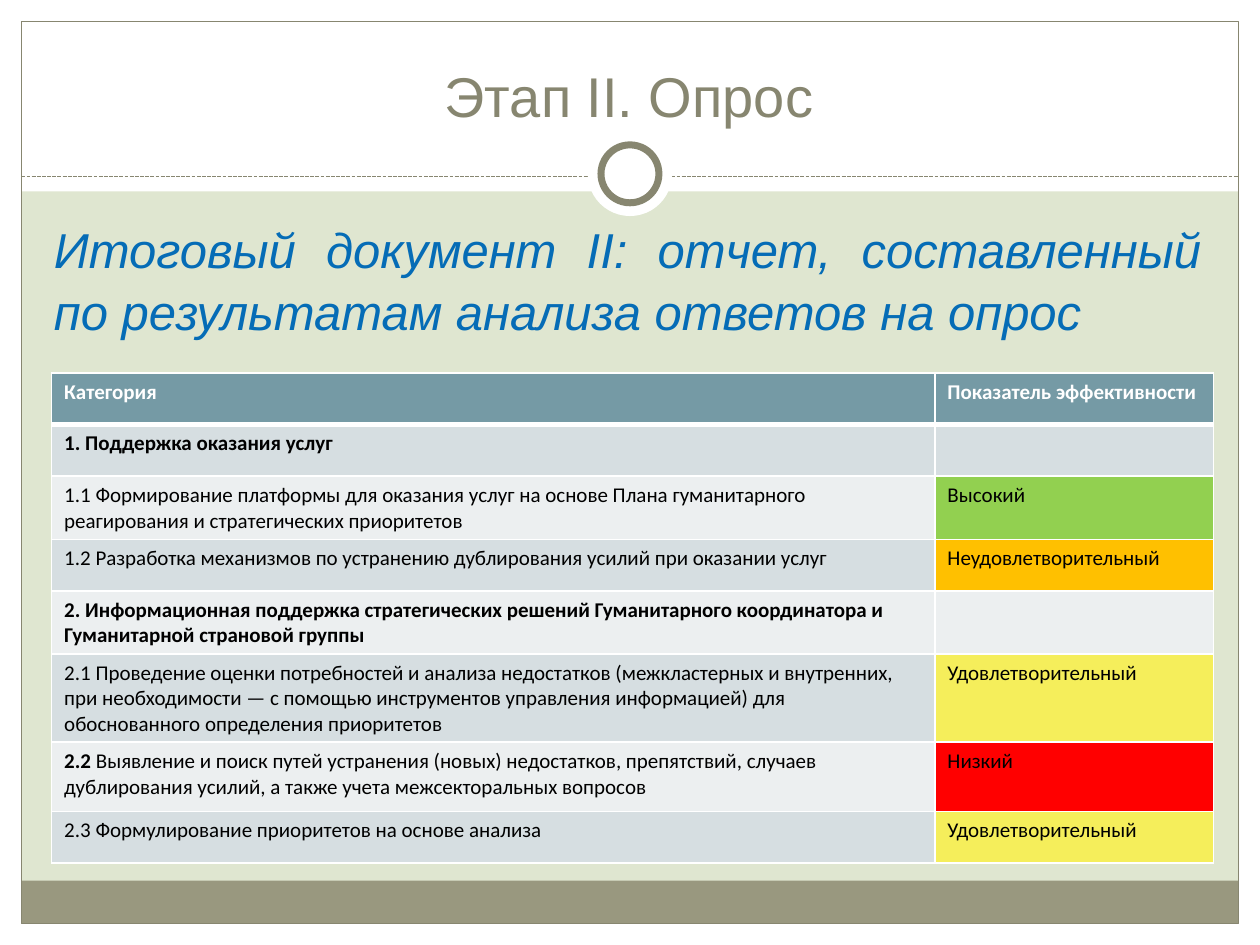
from dataclasses import dataclass

from lxml.etree import SubElement
from pptx import Presentation
from pptx.dml.color import RGBColor
from pptx.enum.dml import MSO_LINE
from pptx.enum.shapes import MSO_CONNECTOR, MSO_SHAPE
from pptx.enum.text import MSO_ANCHOR, PP_ALIGN
from pptx.oxml.ns import qn
from pptx.util import Inches, Pt


@dataclass(frozen=True)
class Theme:
    """Colours, fonts and type sizes of the deck."""
    paper: str = "DFE6D0"
    white: str = "FFFFFF"
    black: str = "000000"
    olive: str = "878670"
    footer: str = "99987F"
    accent: str = "056CB6"
    header: str = "759AA5"
    bands: tuple = ("D6DEE1", "ECEFF0")
    display_font: str = "Arial"
    table_font: str = "Calibri"
    title_size: int = 32
    lead_size: int = 28
    table_size: int = 12


RATINGS = {
    "Высокий": "92D050",
    "Неудовлетворительный": "FFC000",
    "Удовлетворительный": "F5EE5B",
    "Низкий": "FF0000",
}

HEADINGS = ("Категория", "Показатель эффективности")

CATEGORIES = [
    ("1. Поддержка оказания услуг", "", ""),
    ("", "1.1 Формирование платформы для оказания услуг на основе Плана гуманитарного "
         "реагирования и стратегических приоритетов", "Высокий"),
    ("", "1.2 Разработка механизмов по устранению дублирования усилий при оказании услуг",
     "Неудовлетворительный"),
    ("2. Информационная поддержка стратегических решений Гуманитарного координатора и "
     "Гуманитарной страновой группы", "", ""),
    ("", "2.1 Проведение оценки потребностей и анализа недостатков (межкластерных и внутренних, "
         "при необходимости — с помощью инструментов управления информацией) для "
         "обоснованного определения приоритетов", "Удовлетворительный"),
    ("2.2 ", "Выявление и поиск путей устранения (новых) недостатков, препятствий, случаев "
             "дублирования усилий, а также учета межсекторальных вопросов", "Низкий"),
    ("", "2.3 Формулирование приоритетов на основе анализа", "Удовлетворительный"),
]


class SlideBuilder:
    """Draws themed elements on a grid of 100 columns by 75 rows."""

    def __init__(self, deck, theme):
        """Add a blank slide with the theme background."""
        self.theme = theme
        self.column = deck.slide_width / 100
        self.row = deck.slide_height / 75
        self.slide = deck.slides.add_slide(deck.slide_layouts[6])
        backdrop = self.slide.background.fill
        backdrop.solid()
        backdrop.fore_color.rgb = RGBColor.from_string(theme.paper)

    def place(self, left, top, width, height):
        """Turn grid units into slide lengths."""
        return (round(left * self.column), round(top * self.row),
                round(width * self.column), round(height * self.row))

    def apply(self, target, values):
        """Set each attribute named in a dict of format values."""
        for name, value in values.items():
            setattr(target, name, value)

    def panel(self, area, fill=None, line=None, weight=0.75, kind=MSO_SHAPE.RECTANGLE):
        """Draw a preset shape with an optional fill and outline."""
        panel = self.slide.shapes.add_shape(kind, *self.place(*area))
        panel.shadow.inherit = False
        for paint, colour in ((panel.fill, fill), (panel.line.fill, line)):
            if colour:
                paint.solid()
                paint.fore_color.rgb = RGBColor.from_string(colour)
            else:
                paint.background()
        if line:
            panel.line.width = Pt(weight)

    def divider(self, left, right, level):
        """Draw a dashed horizontal rule."""
        x, y, width, _ = self.place(left, level, right - left, 0)
        rule = self.slide.shapes.add_connector(MSO_CONNECTOR.STRAIGHT, x, y, x + width, y)
        rule.line.color.rgb = RGBColor.from_string(self.theme.olive)
        self.apply(rule.line, {"width": Pt(0.75), "dash_style": MSO_LINE.SQUARE_DOT})
        SubElement(rule._element.spPr, qn("a:effectLst"))

    def add_wording(self, paragraph, wording, colour, **style):
        """Add a run with the given font style."""
        run = paragraph.add_run()
        run.text = wording
        run.font.color.rgb = RGBColor.from_string(colour)
        self.apply(run.font, style)

    def text(self, area, wording, colour, frame_style, paragraph_style, **style):
        """Add a wrapped text box with one paragraph."""
        frame = self.slide.shapes.add_textbox(*self.place(*area)).text_frame
        self.apply(frame, {"word_wrap": True, **frame_style})
        self.apply(frame.paragraphs[0], paragraph_style)
        self.add_wording(frame.paragraphs[0], wording, colour, **style)

    def borders(self, cell, bottom):
        """Give a cell white borders with its own bottom weight."""
        properties = cell._tc.get_or_add_tcPr()
        for side, weight in {"lnL": 1, "lnR": 1, "lnT": 1, "lnB": bottom}.items():
            edge = SubElement(properties, qn(f"a:{side}"), w=str(Pt(weight)))
            paint = SubElement(edge, qn("a:solidFill"))
            SubElement(paint, qn("a:srgbClr"), val=self.theme.white)

    def cell(self, cell, fill, colour, bold="", regular="", bottom=1):
        """Fill a table cell with a bold and a regular part."""
        self.borders(cell, bottom)
        cell.fill.solid()
        cell.fill.fore_color.rgb = RGBColor.from_string(fill)
        paragraph = cell.text_frame.paragraphs[0]
        font = {"name": self.theme.table_font, "size": Pt(self.theme.table_size)}
        self.apply(paragraph.font, font)
        for wording, weight in ((bold, True), (regular, False)):
            if wording:
                self.add_wording(paragraph, wording, colour, bold=weight, **font)

    def table(self, area, widths, heights, headings, records):
        """Add the rating table with banded rows and coloured ratings."""
        theme = self.theme
        grid = self.slide.shapes.add_table(
            len(records) + 1, len(headings), *self.place(*area)).table
        for column, width in zip(grid.columns, widths):
            column.width = round(width * self.column)
        for row, height in zip(grid.rows, heights):
            row.height = round(height * self.row)
        for index, heading in enumerate(headings):
            self.cell(grid.cell(0, index), theme.header, theme.white, bold=heading, bottom=3)
        for index, (bold, regular, rating) in enumerate(records):
            band = theme.bands[index % 2]
            self.cell(grid.cell(index + 1, 0), band, theme.black, bold, regular)
            self.cell(grid.cell(index + 1, 1), RATINGS.get(rating, band), theme.black,
                      regular=rating)


def main():
    """Build and save the survey stage slide."""
    deck = Presentation()
    deck.slide_width, deck.slide_height = Inches(10), Inches(7.5)
    theme = Theme()
    page = SlideBuilder(deck, theme)

    margin = 1.7
    inner_width, inner_height = 100 - 2 * margin, 75 - 2 * margin
    for area in ((0, 75 - margin, 100, margin), (0, 0, 100, 15.2),
                 (0, 0, margin, 75), (100 - margin, 0, margin, 75)):
        page.panel(area, theme.white)
    page.panel((margin, 69.9, inner_width, 3.4), theme.footer)
    page.panel((margin, margin, inner_width, inner_height), line=theme.olive)
    page.divider(margin, 100 - margin, 14)
    for diameter, outline in ((6.7, None), (4.6, theme.olive)):
        page.panel((50 - diameter / 2, 13.8 - diameter / 2, diameter, diameter),
                   theme.white, outline, 4, MSO_SHAPE.OVAL)

    page.text((3.3, 3.6, 93.3, 7.1), "Этап II. Опрос", theme.olive,
              {"vertical_anchor": MSO_ANCHOR.BOTTOM}, {"alignment": PP_ALIGN.CENTER},
              name=theme.display_font, size=Pt(theme.title_size))
    page.text((3.3, 16.7, 93, 50),
              "Итоговый документ II: отчет, составленный по результатам анализа ответов на опрос",
              theme.accent, {"vertical_anchor": MSO_ANCHOR.TOP},
              {"alignment": PP_ALIGN.JUSTIFY, "line_spacing": 1.05},
              name=theme.display_font, size=Pt(theme.lead_size), italic=True)
    page.table((4.1, 29.6, 92.2, 38.7), (70.1, 22.1), [4.1] * 6 + [5.5, 4.1],
               HEADINGS, CATEGORIES)
    deck.save("out.pptx")


if __name__ == "__main__":
    main()
